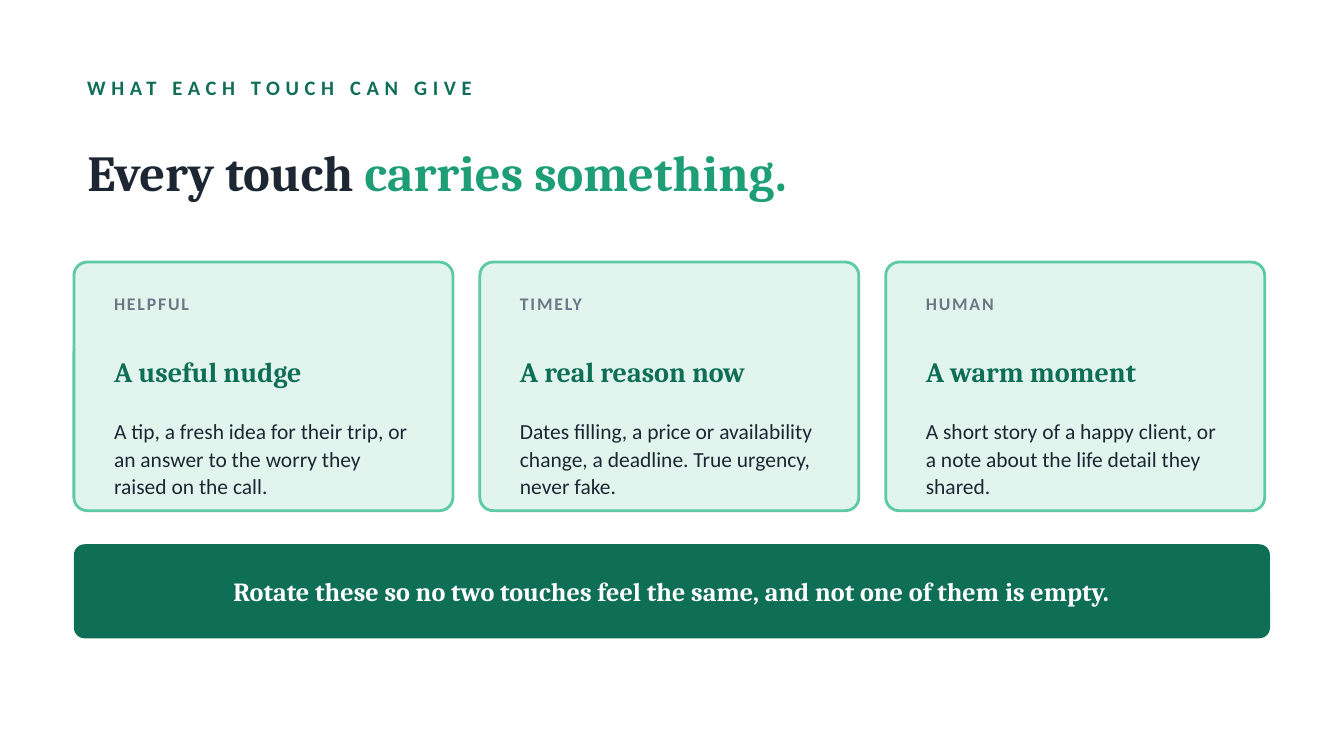
from pptx import Presentation
from pptx.dml.color import RGBColor
from pptx.enum.shapes import MSO_SHAPE
from pptx.enum.text import MSO_ANCHOR, MSO_AUTO_SIZE, PP_ALIGN
from pptx.util import Pt

PX = 4572  # EMU per px, 200 px to the inch

INK = RGBColor(0x1C, 0x27, 0x33)
GREY = RGBColor(0x6B, 0x77, 0x85)
DEEP = RGBColor(0x0F, 0x6E, 0x56)
GREEN = RGBColor(0x1D, 0x9E, 0x75)
MINT = RGBColor(0x5D, 0xCA, 0xA5)
PALE = RGBColor(0xE1, 0xF5, 0xEE)
WHITE = RGBColor(0xFF, 0xFF, 0xFF)

prs = Presentation()
prs.slide_width, prs.slide_height = 2000 * PX, 1125 * PX
s = prs.slides.add_slide(prs.slide_layouts[5])


def write(sp, runs, font, size, bold=True, spacing=0, align=PP_ALIGN.LEFT):
    """Fill a text shape with (text, colour) runs and return its paragraph."""
    tf = sp.text_frame
    tf.word_wrap = True
    tf.auto_size = MSO_AUTO_SIZE.NONE
    tf.vertical_anchor = MSO_ANCHOR.MIDDLE
    p = tf.paragraphs[0]
    p.alignment = align
    for text, color in runs:
        r = p.add_run()
        r.text = text
        r.font.name, r.font.size, r.font.bold = font, Pt(size), bold
        r.font.color.rgb = color
        if spacing:
            r._r.get_or_add_rPr().set("spc", str(spacing * 100))
    return p


def add_panel(x, y, w, h, radius, fill, line=None):
    """Add a rounded rectangle with a corner radius in px."""
    sp = s.shapes.add_shape(MSO_SHAPE.ROUNDED_RECTANGLE, x * PX, y * PX, w * PX, h * PX)
    sp.shadow.inherit = False
    sp.adjustments[0] = radius / min(w, h)
    sp.fill.solid()
    sp.fill.fore_color.rgb = fill
    if line is None:
        sp.line.fill.background()
    else:
        sp.line.color.rgb = line
        sp.line.width = Pt(1.5)


# Eyebrow and title
eyebrow = s.shapes.add_textbox(110 * PX, 100 * PX, 1780 * PX, 60 * PX)
write(eyebrow, [("WHAT EACH TOUCH CAN GIVE", DEEP)], "Calibri", 11, spacing=3)

title = s.shapes.title
title.left, title.top, title.width, title.height = 110 * PX, 170 * PX, 1780 * PX, 170 * PX
write(title, [("Every touch ", INK), ("carries something.", GREEN)], "Cambria", 27)

# Three cards
cards = [
    ("HELPFUL", "A useful nudge",
     "A tip, a fresh idea for their trip, or an answer to the worry they raised on the call."),
    ("TIMELY", "A real reason now",
     "Dates filling, a price or availability change, a deadline. True urgency, never fake."),
    ("HUMAN", "A warm moment",
     "A short story of a happy client, or a note about the life detail they shared."),
]
CARD_W, GAP = 564, 40
for i, (label, heading, body) in enumerate(cards):
    x = 110 + i * (CARD_W + GAP)
    add_panel(x, 390, CARD_W, 370, 20, PALE, MINT)
    label_box, heading_box, body_box = [
        s.shapes.add_textbox((x + 40) * PX, y * PX, 490 * PX, h * PX)
        for y, h in ((422, 60), (482, 140), (626, 110))
    ]
    write(label_box, [(label, GREY)], "Calibri", 9.5, spacing=1)
    write(heading_box, [(heading, DEEP)], "Cambria", 15)
    p = write(body_box, [(body, INK)], "Calibri", 11.5, bold=False)
    p.line_spacing = 1.08

# Closing banner
add_panel(110, 810, 1780, 140, 16, DEEP)
banner = s.shapes.add_textbox(160 * PX, 810 * PX, 1680 * PX, 140 * PX)
write(banner, [("Rotate these so no two touches feel the same, and not one of them is empty.", WHITE)],
      "Cambria", 14, align=PP_ALIGN.CENTER)

prs.save("out.pptx")
